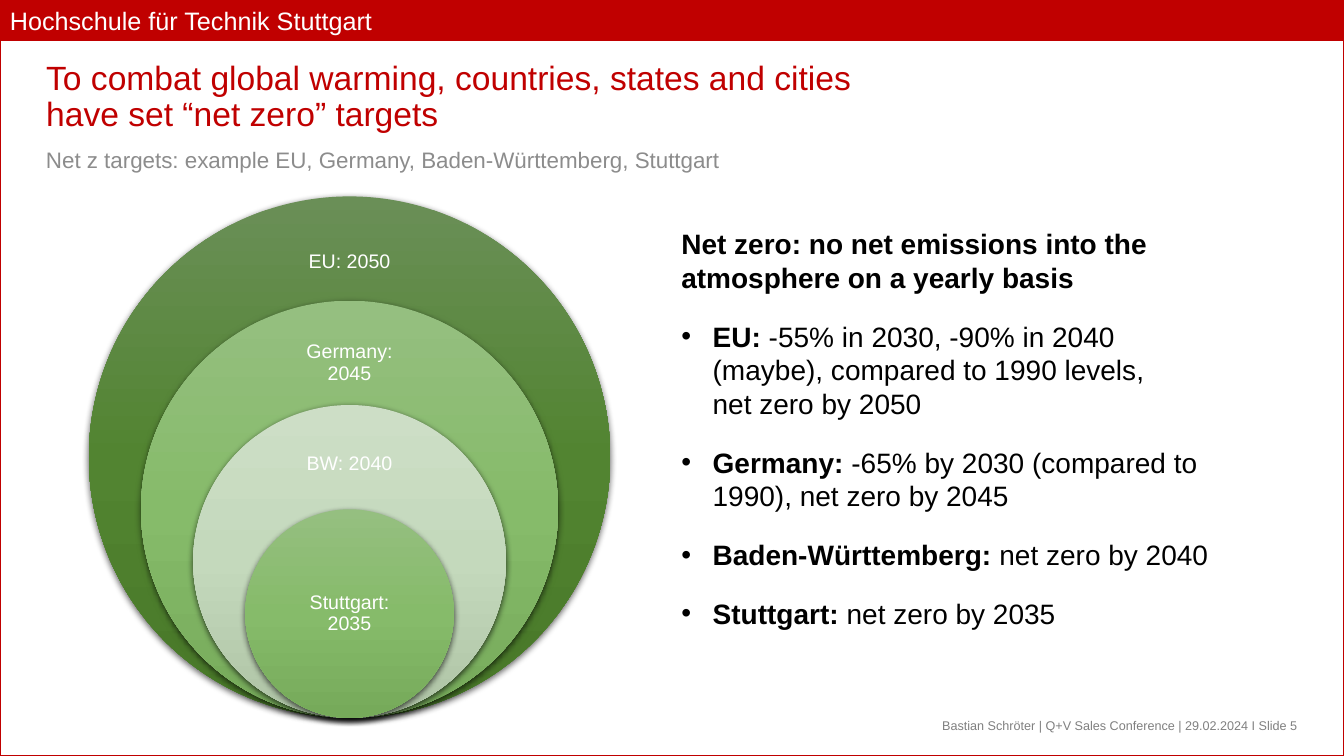
from dataclasses import dataclass

from lxml import etree
from pptx import Presentation
from pptx.dml.color import RGBColor
from pptx.enum.shapes import MSO_SHAPE
from pptx.enum.text import MSO_ANCHOR, MSO_AUTO_SIZE, PP_ALIGN
from pptx.oxml import parse_xml
from pptx.oxml.ns import nsdecls, qn
from pptx.util import Cm, Pt

RECTANGLE, OVAL = MSO_SHAPE.RECTANGLE, MSO_SHAPE.OVAL
TOP, MIDDLE, BOTTOM = MSO_ANCHOR.TOP, MSO_ANCHOR.MIDDLE, MSO_ANCHOR.BOTTOM
LEFT, CENTER, RIGHT = PP_ALIGN.LEFT, PP_ALIGN.CENTER, PP_ALIGN.RIGHT
NO_AUTOFIT = MSO_AUTO_SIZE.NONE

PAGE_WIDTH, PAGE_HEIGHT = 33.87, 19.05
BAND_HEIGHT = 1.02


@dataclass(frozen=True)
class Theme:
    font: str = "Arial"
    red: str = "C00000"
    white: str = "FFFFFF"
    black: str = "000000"
    subtitle_grey: str = "8C8C8C"
    footer_grey: str = "808080"
    dark_green: tuple = ("6A8F57", "528431", "487828")
    green: tuple = ("95BF80", "86BB6A", "76AA5A")
    pale_green: tuple = ("CDDEC6", "C4D9BC", "AEC3A5")
    title_size: int = 24
    body_size: int = 20
    band_size: int = 18
    subtitle_size: int = 16
    label_size: int = 14
    footer_size: int = 9


THEME = Theme()

# Text, gradient, share of the outer diameter, centre height of the label
TARGETS = [
    ("EU: 2050", THEME.dark_green, 1.0, 6.6),
    ("Germany: 2045", THEME.green, 0.8, 9.15),
    ("BW: 2040", THEME.pale_green, 0.6, 11.7),
    ("Stuttgart: 2035", THEME.green, 0.4, 15.47),
]

HEADLINE = "Net zero: no net emissions into the atmosphere on a yearly basis"
DETAILS = [
    ("EU: ", "-55% in 2030, -90% in 2040 (maybe), compared to 1990 levels,\nnet zero by 2050"),
    ("Germany: ", "-65% by 2030 (compared to 1990), net zero by 2045"),
    ("Baden-Württemberg: ", "net zero by 2040"),
    ("Stuttgart: ", "net zero by 2035"),
]


def add_text(para, text, size, color, bold=False, align=LEFT, line_spacing=None, before=None):
    """Append text to a paragraph; a newline becomes a line break."""
    para.alignment = align
    if line_spacing:
        para.line_spacing = line_spacing
    if before is not None:
        para.space_before = Pt(before)
    for index, line in enumerate(text.split("\n")):
        if index:
            para.add_line_break()
        span = para.add_run()
        span.text = line
        span.font.name = THEME.font
        span.font.size = Pt(size)
        span.font.bold = bold
        span.font.color.rgb = RGBColor.from_string(color)


def add_bullet(para, indent):
    properties = para._p.get_or_add_pPr()
    properties.set("marL", str(Cm(indent)))
    properties.set("indent", str(-Cm(indent)))
    etree.SubElement(properties, qn("a:buFont")).set("typeface", THEME.font)
    etree.SubElement(properties, qn("a:buChar")).set("char", "•")


def apply_gradient(shape, colors):
    """Fill from top to bottom with evenly spaced colours."""
    step = 100000 // (len(colors) - 1)
    stops = "".join(
        f'<a:gs pos="{index * step}"><a:srgbClr val="{color}"/></a:gs>'
        for index, color in enumerate(colors)
    )
    shape.fill.gradient()
    old_fill = shape._element.spPr.find(qn("a:gradFill"))
    new_fill = parse_xml(
        f'<a:gradFill {nsdecls("a")} rotWithShape="1"><a:gsLst>{stops}</a:gsLst>'
        '<a:lin ang="5400000" scaled="0"/></a:gradFill>'
    )
    old_fill.getparent().replace(old_fill, new_fill)


def apply_shadow(shape):
    effects = shape._element.spPr.find(qn("a:effectLst"))
    effects.append(parse_xml(
        f'<a:outerShdw {nsdecls("a")} blurRad="{Pt(4.5)}" dist="{Pt(1.5)}" dir="5400000" '
        f'rotWithShape="0"><a:srgbClr val="{THEME.black}"><a:alpha val="63000"/></a:srgbClr>'
        '</a:outerShdw>'
    ))


class SlideBuilder:
    def __init__(self, deck, theme):
        self.theme = theme
        self.slide = deck.slides.add_slide(deck.slide_layouts[5])

    def shape(self, kind, left, top, width, height, fill=None, line=None, line_width=1):
        shape = self.slide.shapes.add_shape(kind, Cm(left), Cm(top), Cm(width), Cm(height))
        shape.shadow.inherit = False
        if fill:
            shape.fill.solid()
            shape.fill.fore_color.rgb = RGBColor.from_string(fill)
        else:
            shape.fill.background()
        if line:
            shape.line.color.rgb = RGBColor.from_string(line)
            shape.line.width = Pt(line_width)
        else:
            shape.line.fill.background()
        return shape

    def text_box(self, left, top, width, height, anchor=TOP):
        """Add an empty wrapping box and return its text frame."""
        box = self.slide.shapes.add_textbox(Cm(left), Cm(top), Cm(width), Cm(height))
        frame = box.text_frame
        frame.word_wrap = True
        frame.vertical_anchor = anchor
        return frame

    def title(self, text, left, top, width, height):
        title = self.slide.shapes.title
        title.left, title.top = Cm(left), Cm(top)
        title.width, title.height = Cm(width), Cm(height)
        frame = title.text_frame
        frame.auto_size = NO_AUTOFIT
        frame.vertical_anchor = TOP
        add_text(frame.paragraphs[0], text, self.theme.title_size, self.theme.red,
                 line_spacing=0.9)

    def band(self, text):
        band = self.shape(RECTANGLE, 0, 0, PAGE_WIDTH, BAND_HEIGHT,
                          fill=self.theme.red, line=self.theme.red, line_width=0.75)
        band.text_frame.vertical_anchor = MIDDLE
        add_text(band.text_frame.paragraphs[0], text, self.theme.band_size, self.theme.white)

    def nested_circles(self, targets, center, bottom, diameter):
        """Stack circles that touch at the bottom, each with its label."""
        label_width, label_height = 3.12, 1.4
        for text, colors, share, label_middle in targets:
            size = diameter * share
            circle = self.shape(OVAL, center - size / 2, bottom - size, size, size)
            apply_gradient(circle, colors)
            apply_shadow(circle)
            label = self.text_box(center - label_width / 2, label_middle - label_height / 2,
                                  label_width, label_height, anchor=MIDDLE)
            label.margin_left = label.margin_right = 0
            add_text(label.paragraphs[0], text, self.theme.label_size, self.theme.white,
                     align=CENTER, line_spacing=0.9)

    def details(self, headline, details, left, top, width, height):
        style = {"size": self.theme.body_size, "color": self.theme.black, "before": 18}
        frame = self.text_box(left, top, width, height)
        add_text(frame.paragraphs[0], headline, bold=True, **style)
        for place, target in details:
            para = frame.add_paragraph()
            add_text(para, place, bold=True, **style)
            add_text(para, target, **style)
            add_bullet(para, indent=0.79)


def main():
    deck = Presentation()
    deck.slide_width, deck.slide_height = Cm(PAGE_WIDTH), Cm(PAGE_HEIGHT)
    page = SlideBuilder(deck, THEME)

    page.band("Hochschule für Technik Stuttgart")
    page.shape(RECTANGLE, 0, 0, PAGE_WIDTH, PAGE_HEIGHT, line=THEME.red)
    page.title("To combat global warming, countries, states and cities have set “net zero” targets",
               0.91, 1.42, 22.5, 2.64)
    subtitle = page.text_box(0.91, 3.51, 20.45, 1.02, anchor=MIDDLE)
    add_text(subtitle.paragraphs[0],
             "Net z targets: example EU, Germany, Baden-Württemberg, Stuttgart",
             THEME.subtitle_size, THEME.subtitle_grey)
    page.nested_circles(TARGETS, center=8.81, bottom=18.09, diameter=13.14)
    page.details(HEADLINE, DETAILS, 16.92, 5.59, 13.87, 10.52)
    footer = page.text_box(18.72, 17.58, 14.22, 1.02, anchor=BOTTOM)
    add_text(footer.paragraphs[0],
             "Bastian Schröter | Q+V Sales Conference | 29.02.2024 I Slide 5",
             THEME.footer_size, THEME.footer_grey, align=RIGHT)

    deck.save("out.pptx")


if __name__ == "__main__":
    main()
